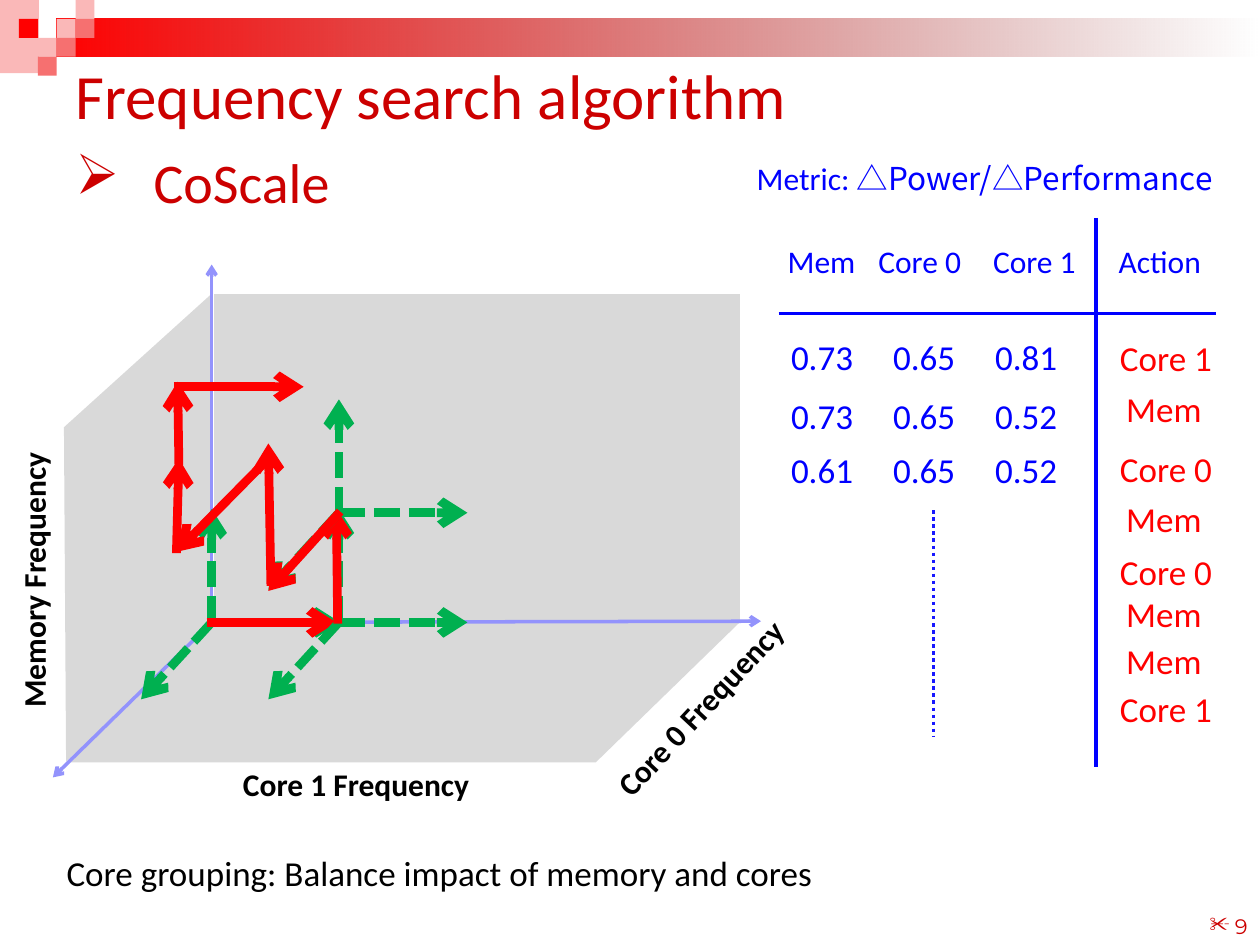
from lxml import etree
from pptx import Presentation
from pptx.dml.color import RGBColor
from pptx.enum.dml import MSO_LINE
from pptx.enum.shapes import MSO_CONNECTOR, MSO_SHAPE
from pptx.enum.text import MSO_ANCHOR, PP_ALIGN
from pptx.oxml.ns import qn
from pptx.util import Inches, Pt

STRAIGHT = MSO_CONNECTOR.STRAIGHT
RECTANGLE, PARALLELOGRAM = MSO_SHAPE.RECTANGLE, MSO_SHAPE.PARALLELOGRAM
DASH, DOT = MSO_LINE.SQUARE_DOT, MSO_LINE.ROUND_DOT
LEFT, CENTER, RIGHT = PP_ALIGN.LEFT, PP_ALIGN.CENTER, PP_ALIGN.RIGHT
TOP, MIDDLE, BOTTOM = MSO_ANCHOR.TOP, MSO_ANCHOR.MIDDLE, MSO_ANCHOR.BOTTOM

BLACK = RGBColor(0x00, 0x00, 0x00)
RED = RGBColor(0xFF, 0x00, 0x00)
DARK_RED = RGBColor(0xCC, 0x00, 0x00)
MAROON = RGBColor(0x76, 0x00, 0x00)
PINK = RGBColor(0xFA, 0xB8, 0xB8)
ROSE = RGBColor(0xF6, 0x70, 0x70)
GRAY = RGBColor(0xD9, 0xD9, 0xD9)
GREEN = RGBColor(0x00, 0xB0, 0x50)
BLUE = RGBColor(0x00, 0x00, 0xFF)
DOT_BLUE = RGBColor(0x18, 0x18, 0xFF)
AXIS_BLUE = RGBColor(0x93, 0x93, 0xFC)
BODY_FONT = "Calibri"


def style(paragraph, size, color, align=LEFT, bold=False, font=BODY_FONT):
    paragraph.alignment = align
    paragraph.font.name = font
    paragraph.font.size = Pt(size)
    paragraph.font.bold = bold
    paragraph.font.color.rgb = color


def add_bullet(paragraph, char, indent):
    props = paragraph._p.get_or_add_pPr()
    props.set("marL", str(Inches(indent)))
    props.set("indent", str(-Inches(indent)))
    etree.SubElement(props, qn("a:buChar")).set("char", char)


def add_text(slide, text, box, size, color, align=LEFT, bold=False,
             anchor=TOP, rotation=0, font=BODY_FONT, bullet=None):
    label = slide.shapes.add_textbox(*map(Inches, box))
    label.rotation = rotation
    frame = label.text_frame
    frame.word_wrap = True
    frame.vertical_anchor = anchor
    paragraph = frame.paragraphs[0]
    paragraph.text = text
    if bullet:
        add_bullet(paragraph, *bullet)
    style(paragraph, size, color, align, bold, font)
    return paragraph


def add_block(slide, kind, box, color):
    block = slide.shapes.add_shape(kind, *map(Inches, box))
    block.shadow.inherit = False
    block.fill.solid()
    block.fill.fore_color.rgb = color
    block.line.fill.background()
    return block


def add_line(slide, start, end, color, width, dash=None, arrow=False):
    connector = slide.shapes.add_connector(STRAIGHT, *map(Inches, (*start, *end)))
    connector.line.color.rgb = color
    connector.line.width = Pt(width)
    if dash:
        connector.line.dash_style = dash
    if arrow:
        line = connector.line._get_or_add_ln()
        etree.SubElement(line, qn("a:tailEnd")).set("type", "arrow")
    etree.SubElement(connector._element.spPr, qn("a:effectLst"))


def draw_banner(slide, left, top, width):
    add_block(slide, RECTANGLE, (left, top, 0.31, 0.58), PINK)
    bar = add_block(slide, RECTANGLE, (left + 0.45, top + 0.15, width - 0.45, 0.3), RED)
    bar.fill.gradient()
    bar.fill.gradient_angle = 0
    start, end = bar.fill.gradient_stops
    start.color.rgb, start.position = RED, 0
    end.color.rgb, end.position = MAROON, 1
    for color in bar._element.spPr.findall(".//" + qn("a:srgbClr"))[1:]:
        etree.SubElement(color, qn("a:alpha")).set("val", "0")
    side = 0.15
    for column, row, color in ((3, 1, PINK), (4, 0, PINK), (4, 1, ROSE), (2, 2, PINK),
                               (1, 1, RED), (3, 2, ROSE), (2, 3, ROSE)):
        add_block(slide, RECTANGLE, (left + column * side, top + row * side, side, side), color)


def draw_heading(slide, left, top, width):
    title = slide.shapes.title
    title.left, title.top = Inches(left), Inches(top)
    title.width, title.height = Inches(width), Inches(0.49)
    title.text_frame.text = "Frequency search algorithm"
    title.text_frame.vertical_anchor = MIDDLE
    style(title.text_frame.paragraphs[0], 36, DARK_RED)
    add_text(slide, "CoScale", (left, top + 0.69, 2.62, 0.49), 32, DARK_RED,
             anchor=MIDDLE, bullet=("➢", 0.62))


def draw_search_space(slide, left, top):
    origin_x, origin_y = left + 1.26, top + 2.84

    def at(x, y):
        return origin_x + x, origin_y + y

    def arrow(start, end, color, width=5, dash=None):
        add_line(slide, at(*start), at(*end), color, width, dash, arrow=True)

    for x, y, width, height, skew, rotation in ((-2.25, -1.74, 3.34, 1.98, 0.892, 137.9),
                                                (0.02, -2.61, 4.17, 2.6, 0, 0),
                                                (-1.12, 0, 5.31, 1.11, 1.028, 0)):
        face = add_block(slide, PARALLELOGRAM, (*at(x, y), width, height), GRAY)
        face.adjustments[0] = skew
        face.rotation = rotation

    for axis_end in ((-1.26, 1.23), (0, -2.84), (4.36, -0.01)):
        arrow((0, 0), axis_end, AXIS_BLUE, 2)

    for name, x, y, width, rotation in (("Core 1", 0.15, 1.08, 2.17, 0),
                                        ("Core 0", 2.85, 0.41, 2.17, 313),
                                        ("Memory", -2.67, -0.68, 2.51, 270)):
        add_text(slide, f"{name} Frequency", (*at(x, y), width, 0.4), 18, BLACK,
                 bold=True, rotation=rotation)

    choices = ((1.02, 0), (0, -0.9), (-0.56, 0.61))
    search_steps = (
        ((0, 0), [((-0.04, 0), (0.99, 0))]),
        ((1.01, 0), [((1, 0.01), (0.99, -0.9))]),
        ((1.01, -0.87), [((1.02, -0.88), (0.45, -0.25)),
                         ((0.47, -0.29), (0.45, -1.42)),
                         ((0.45, -1.3), (-0.28, -0.56)),
                         ((-0.28, -0.55), (-0.26, -1.3)),
                         ((-0.26, -1.25), (-0.27, -1.91)),
                         ((-0.3, -1.87), (0.73, -1.87))]),
    )
    for (x, y), moves in search_steps:
        for dx, dy in choices:
            arrow((x, y), (x + dx, y + dy), GREEN, dash=DASH)
        for start, end in moves:
            arrow(start, end, RED)


def draw_metric_table(slide, left, top, width, height):
    metric = add_text(slide, "Metric:", (left - 0.4, top - 0.52, 4.07, 0.4), 18, BLUE,
                      CENTER, anchor=MIDDLE)
    formula = metric.add_run()
    formula.text = " △Power/△Performance"
    formula.font.name = "Noto Sans CJK SC"

    for name, x in (("Mem", -0.21), ("Core 0", 0.57), ("Core 1", 1.48)):
        add_text(slide, name, (left + x, top + 0.14, 1.1, 0.4), 18, BLUE, CENTER, anchor=MIDDLE)
    add_text(slide, "Action", (left + 2.6, top + 0.14, 0.99, 0.4), 18, BLUE)
    add_line(slide, (left, top + 0.76), (left + width, top + 0.76), BLUE, 2)
    add_line(slide, (left + 2.52, top), (left + 2.52, top + height), BLUE, 2)

    for y, values in ((0.88, ("0.73", "0.65", "0.81")),
                      (1.35, ("0.73", "0.65", "0.52")),
                      (1.78, ("0.61", "0.65", "0.52"))):
        for column, value in enumerate(values):
            add_text(slide, value, (left + 0.81 * column, top + y, 0.86, 0.44), 20, BLUE)

    for action, y in (("Core 1", 0.89), ("Mem", 1.3), ("Core 0", 1.77), ("Mem", 2.17),
                      ("Core 0", 2.59), ("Mem", 2.92), ("Mem", 3.3), ("Core 1", 3.68)):
        x = 2.66 if action == "Mem" else 2.61
        add_text(slide, action, (left + x, top + y, 1.06, 0.44), 20, RED)
    add_line(slide, (left + 1.23, top + 2.32), (left + 1.23, top + 4.12), DOT_BLUE, 2, DOT)


def draw_footer(slide, left, top):
    add_text(slide, "Core grouping: Balance impact of memory and cores",
             (left, top, 6.3, 0.44), 20, BLACK)
    add_text(slide, "9", (left + 7.24, top + 0.29, 2.33, 0.5), 12, DARK_RED, RIGHT,
             anchor=BOTTOM, font="Montserrat", bullet=("✂", 0.2))


def main():
    deck = Presentation()
    deck.slide_width, deck.slide_height = Inches(10), Inches(7.5)
    slide = deck.slides.add_slide(deck.slide_layouts[5])
    draw_banner(slide, 0, 0, 10)
    draw_search_space(slide, 0.42, 2.1)
    draw_heading(slide, 0.5, 0.5, 9)
    draw_metric_table(slide, 6.18, 1.73, 3.47, 4.36)
    draw_footer(slide, 0.43, 6.71)
    deck.save("out.pptx")


if __name__ == "__main__":
    main()
